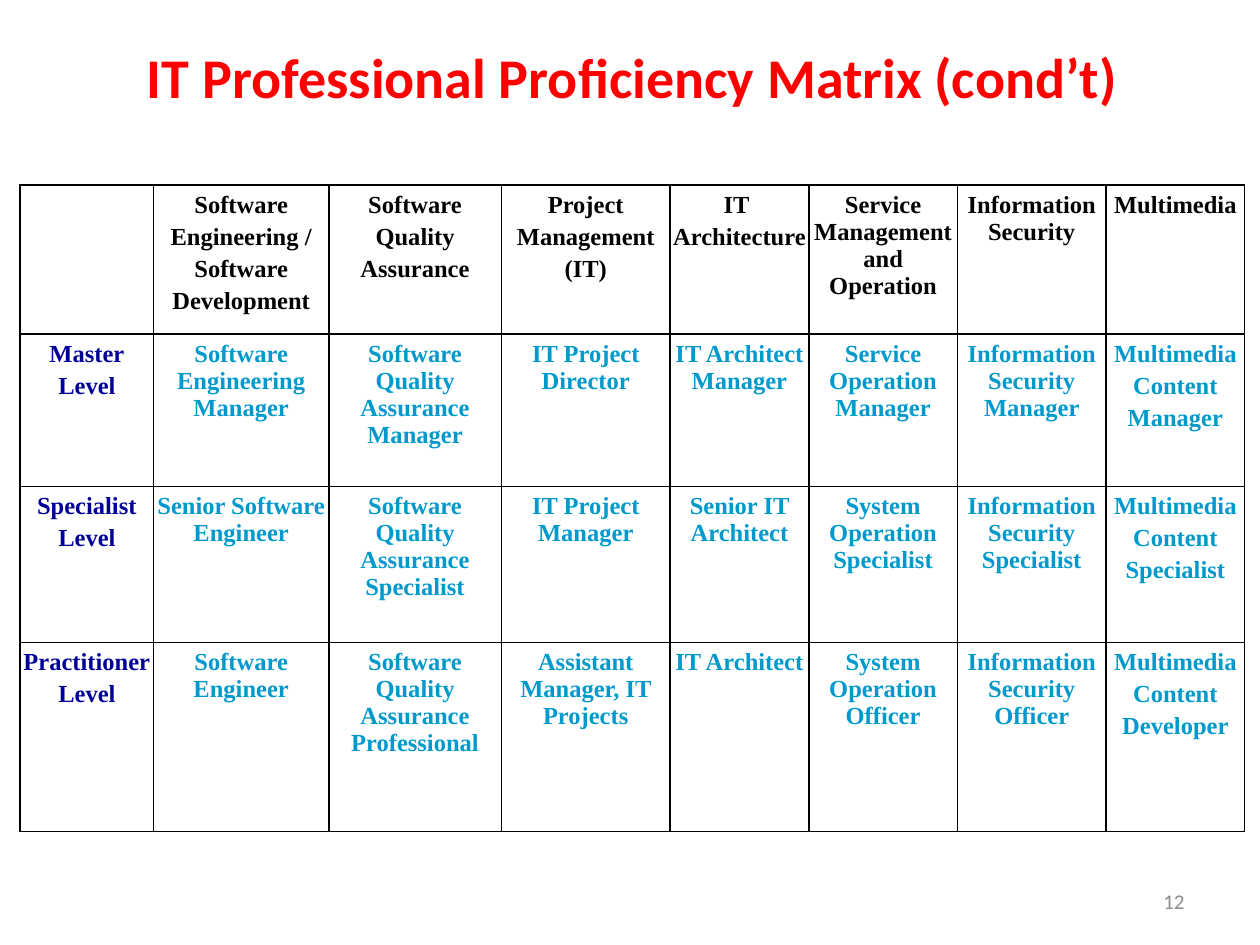
"""Builds the IT professional proficiency matrix slide."""
from lxml.etree import SubElement
from pptx import Presentation
from pptx.dml.color import RGBColor
from pptx.enum.text import MSO_ANCHOR, MSO_AUTO_SIZE, PP_ALIGN
from pptx.oxml.ns import qn
from pptx.util import Inches, Pt

TITLE = "IT Professional Proficiency Matrix (cond’t)"
PAGE_NUMBER = "12"
MATRIX = [
    ["", "Software\nEngineering /\nSoftware\nDevelopment", "Software\nQuality\nAssurance",
     "Project\nManagement\n(IT)", "IT \nArchitecture", "Service Management and Operation",
     "Information Security", "Multimedia"],
    ["Master\nLevel", "Software Engineering Manager", "Software\vQuality Assurance Manager",
     "IT Project Director", "IT Architect Manager", "Service Operation Manager",
     "Information Security Manager", "Multimedia\nContent\nManager"],
    ["Specialist\nLevel", "Senior Software Engineer", "Software\vQuality Assurance Specialist",
     "IT Project Manager", "Senior IT Architect", "System Operation Specialist",
     "Information Security Specialist", "Multimedia\nContent\nSpecialist"],
    ["Practitioner\nLevel", "Software Engineer", "Software\vQuality Assurance Professional",
     "Assistant Manager, IT Projects", "IT Architect", "System Operation Officer",
     "Information Security Officer", "Multimedia\nContent\nDeveloper"],
]
COLUMN_WIDTHS = [1.06, 1.39, 1.37, 1.34, 1.1, 1.18, 1.18, 1.1]
ROW_HEIGHTS = [1.18, 1.21, 1.24, 1.5]
HEADER_COLOR, LEVEL_COLOR, ROLE_COLOR = "000000", "000099", "0099CC"
CELL_SIZE = 14


def add_text(paragraph, text, font_name, size, color, bold, alignment):
    paragraph.alignment = alignment
    for index, line in enumerate(text.split("\v")):
        if index:
            paragraph.add_line_break()
        run = paragraph.add_run()
        run.text = line
        run.font.name = font_name
        run.font.size = Pt(size)
        run.font.bold = bold
        run.font.color.rgb = RGBColor.from_string(color)


def add_borders(cell, color="000000", width=1):
    properties = cell._tc.get_or_add_tcPr()
    for side in ("a:lnL", "a:lnR", "a:lnT", "a:lnB"):
        line = SubElement(properties, qn(side), w=str(Pt(width)))
        fill = SubElement(line, qn("a:solidFill"))
        SubElement(fill, qn("a:srgbClr"), val=color)


def fill_cell(cell, text, color):
    cell.margin_left = cell.margin_right = Inches(0.02)
    cell.margin_top = cell.margin_bottom = Inches(0.05)
    add_borders(cell)
    cell.fill.background()
    if not text:
        return
    frame = cell.text_frame
    for index, part in enumerate(text.split("\n")):
        paragraph = frame.add_paragraph() if index else frame.paragraphs[0]
        if index:
            paragraph.space_before = Pt(CELL_SIZE * 0.2)
        add_text(paragraph, part, "Times New Roman", CELL_SIZE, color, True, PP_ALIGN.CENTER)


def add_title(slide):
    title = slide.shapes.title
    title.left, title.top, title.width, title.height = map(Inches, (0.52, 0.29, 9, 0.94))
    frame = title.text_frame
    frame.word_wrap = True
    frame.auto_size = MSO_AUTO_SIZE.NONE
    frame.vertical_anchor = MSO_ANCHOR.TOP
    add_text(frame.paragraphs[0], TITLE, "Calibri", 32, "FF0000", True, PP_ALIGN.CENTER)


def add_matrix(slide):
    table = slide.shapes.add_table(
        len(ROW_HEIGHTS), len(COLUMN_WIDTHS), Inches(0.16), Inches(1.47),
        Inches(sum(COLUMN_WIDTHS)), Inches(sum(ROW_HEIGHTS))).table
    table.first_row = table.horz_banding = False
    for column, width in zip(table.columns, COLUMN_WIDTHS):
        column.width = Inches(width)
    for row_index, (row, height) in enumerate(zip(table.rows, ROW_HEIGHTS)):
        row.height = Inches(height)
        for column_index, text in enumerate(MATRIX[row_index]):
            body_color = ROLE_COLOR if column_index else LEVEL_COLOR
            fill_cell(row.cells[column_index], text, body_color if row_index else HEADER_COLOR)


def add_page_number(slide):
    box = slide.shapes.add_textbox(*map(Inches, (7.17, 6.95, 2.33, 0.4)))
    frame = box.text_frame
    frame.word_wrap = True
    frame.vertical_anchor = MSO_ANCHOR.MIDDLE
    add_text(frame.paragraphs[0], PAGE_NUMBER, "Calibri", 12, "8C8C8C", False, PP_ALIGN.RIGHT)


def main():
    presentation = Presentation()
    presentation.slide_width, presentation.slide_height = Inches(10), Inches(7.5)
    slide = presentation.slides.add_slide(presentation.slide_layouts.get_by_name("Title Only"))
    add_page_number(slide)
    add_matrix(slide)
    add_title(slide)
    presentation.save("out.pptx")


if __name__ == "__main__":
    main()
